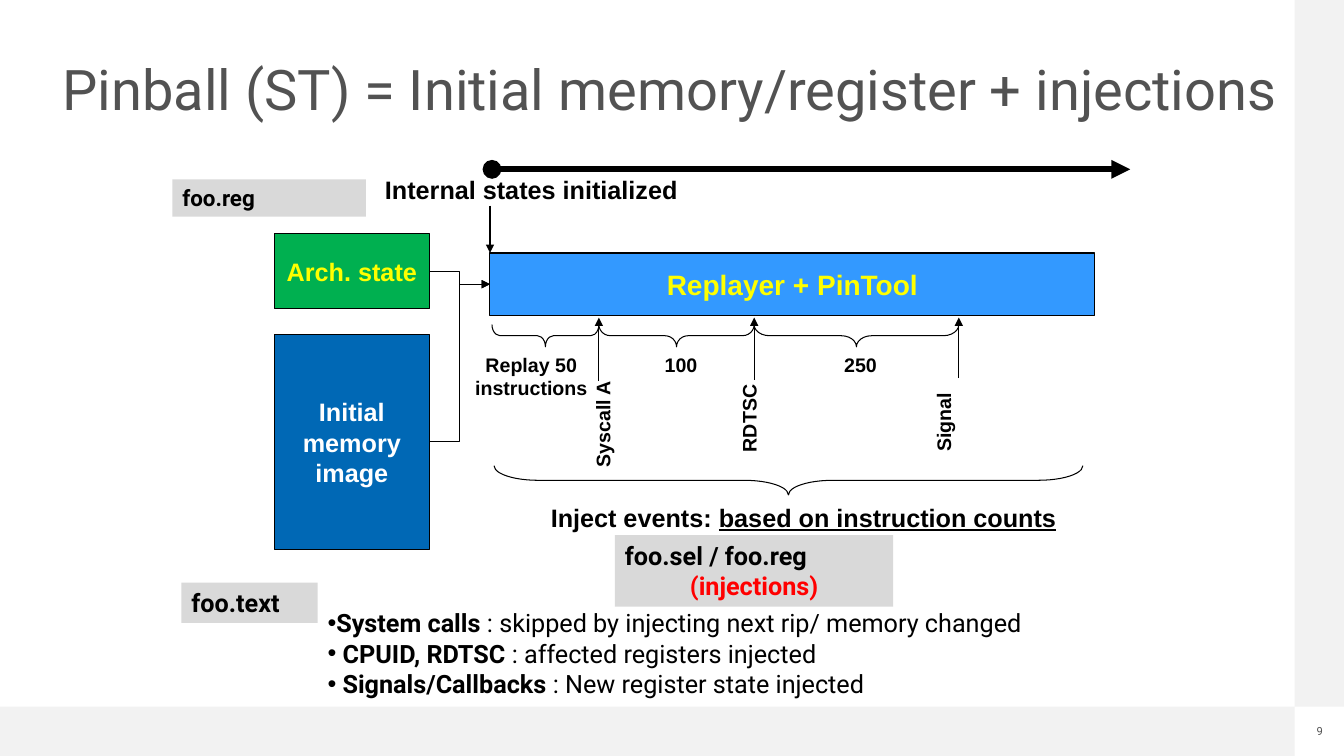
from lxml import etree
from pptx import Presentation
from pptx import util as u
from pptx.dml.color import RGBColor
from pptx.enum import shapes, text
from pptx.oxml.ns import qn

PX = 9144  # EMU in one px, a hundredth of an inch

BLACK = RGBColor(0, 0, 0)
WHITE = RGBColor(255, 255, 255)
YELLOW = RGBColor(255, 255, 0)
RED = RGBColor(255, 0, 0)
GREEN = RGBColor(0, 0xB0, 0x50)
NAVY = RGBColor(0, 0x68, 0xB5)
SKY = RGBColor(0x33, 0x99, 0xFF)
GREY = RGBColor(0xD9, 0xD9, 0xD9)
PALE = RGBColor(0xF2, 0xF2, 0xF2)
SLATE = RGBColor(0x52, 0x52, 0x52)

KIND = shapes.MSO_SHAPE
LINK = shapes.MSO_CONNECTOR
LEFT, MID = text.PP_ALIGN.LEFT, text.PP_ALIGN.CENTER


def px(*nums):
    return [u.Emu(round(n * PX)) for n in nums]


def add_run(par, words, size, color=BLACK, font="Arial", bold=True, under=False):
    run = par.add_run()
    run.text = words
    run.font.size = u.Pt(size)
    run.font.name = font
    run.font.bold = bold
    run.font.underline = under
    run.font.color.rgb = color


def next_par(frame, first, align=LEFT):
    par = frame.paragraphs[0] if first else frame.add_paragraph()
    par.alignment = align
    return par


def add_rect(tree, x, y, w, h, fill, edge=False):
    rect = tree.add_shape(KIND.RECTANGLE, *px(x, y, w, h))
    rect.shadow.inherit = False
    rect.fill.solid()
    rect.fill.fore_color.rgb = fill
    if edge:
        rect.line.color.rgb = BLACK
        rect.line.width = u.Pt(0.75)
    else:
        rect.line.fill.background()
    return rect


def add_block(tree, x, y, w, h, fill, words, size, color):
    block = add_rect(tree, x, y, w, h, fill, edge=True)
    frame = block.text_frame
    frame.word_wrap = True
    frame.vertical_anchor = text.MSO_ANCHOR.MIDDLE
    add_run(next_par(frame, True, MID), words, size, color)
    return block


def add_tag(tree, x, y, w, h, words, size, note=None):
    frame = add_rect(tree, x, y, w, h, GREY).text_frame
    frame.word_wrap = True
    frame.vertical_anchor = text.MSO_ANCHOR.TOP
    add_run(next_par(frame, True), words, size, font="Roboto")
    if note:
        add_run(next_par(frame, False, MID), note, size, RED, "Roboto")


def add_box(tree, x, y, w, h, wrap=False, inset=True):
    box = tree.add_textbox(*px(x, y, w, h))
    frame = box.text_frame
    frame.word_wrap = wrap
    if not inset:
        frame.margin_left = frame.margin_right = 0
        frame.margin_top = frame.margin_bottom = 0
    return box


def add_label(tree, x, y, w, h, lines, size=14, align=MID, turn=0):
    box = add_box(tree, x, y, w, h)
    box.rotation = turn
    for i, words in enumerate(lines):
        add_run(next_par(box.text_frame, i == 0, align), words, size)


def add_plain(tree, x, y, w, h, words, size):
    box = add_box(tree, x, y, w, h, inset=False)
    par = next_par(box.text_frame, True, MID)
    par.line_spacing = 0.9
    add_run(par, words, size, SLATE, "Roboto", bold=False)


def add_arrow(tree, x1, y1, x2, y2, kind=LINK.STRAIGHT, width=0.75, head=None):
    arrow = tree.add_connector(kind, *px(x1, y1, x2, y2))
    arrow.line.color.rgb = BLACK
    arrow.line.width = u.Pt(width)
    props = arrow.line._get_or_add_ln()
    if head:
        etree.SubElement(props, qn("a:headEnd"), type=head)
    etree.SubElement(props, qn("a:tailEnd"), type="triangle")
    etree.SubElement(arrow._element.spPr, qn("a:effectLst"))
    return arrow


def add_brace(tree, x1, x2, y, deep):
    # A left brace turned to point down, below the span x1 to x2
    span = x2 - x1
    left, top = (x1 + x2 - deep) / 2, y + (deep - span) / 2
    brace = tree.add_shape(KIND.LEFT_BRACE, *px(left, top, deep, span))
    brace.rotation = 270
    brace.adjustments[0] = 0.075 * span / deep
    brace.shadow.inherit = False
    brace.fill.background()
    brace.line.color.rgb = BLACK
    brace.line.width = u.Pt(0.75)


def add_list(tree, x, y, w, h, items):
    frame = add_box(tree, x, y, w, h, wrap=True).text_frame
    for i, (name, rest) in enumerate(items):
        par = next_par(frame, i == 0)
        props = par._p.get_or_add_pPr()
        props.set("marL", "0")
        props.set("indent", "0")
        etree.SubElement(props, qn("a:buFont"), typeface="Arial")
        etree.SubElement(props, qn("a:buChar"), char="•")
        add_run(par, name, 18, font="Roboto")
        add_run(par, rest, 18, font="Roboto", bold=False)


def main():
    deck = Presentation()
    deck.slide_width, deck.slide_height = px(1333, 750)
    tree = deck.slides.add_slide(deck.slide_layouts[6]).shapes

    # Edge bands, page number and title
    add_rect(tree, 0, 701, 1284, 49, PALE)
    add_rect(tree, 1284, 0, 49, 701, PALE)
    add_plain(tree, 1302, 720, 14, 13, "9", 8)
    add_plain(tree, 62, 62, 1204, 104,
              "Pinball (ST) = Initial memory/register + injections", 40)

    # State blocks feeding the replayer
    play = add_block(tree, 486, 251, 600, 62, SKY, "Replayer + PinTool", 20, YELLOW)
    arch = add_block(tree, 272, 232, 154, 74, GREEN, "Arch. state", 18, YELLOW)
    image = add_block(tree, 272, 332, 154, 213, NAVY, "Initial memory image", 18, WHITE)
    for block in (arch, image):
        bend = add_arrow(tree, 426, 282, 486, 282, LINK.ELBOW)
        bend.begin_connect(block, 3)
        bend.end_connect(play, 1)

    # Time line and its start
    add_label(tree, 372, 168, 313, 40, ["Internal states initialized"], 18, LEFT)
    add_arrow(tree, 486, 204, 486, 251)
    add_arrow(tree, 488, 168, 1121, 168, width=4.5, head="oval")

    # Events: stop, arrow foot, name centre, name length, name
    events = [
        (594, 378, 598, 421, 111, "Syscall A"),
        (748, 377, 743, 415, 100, "RDTSC"),
        (951, 375, 936, 419, 101, "Signal"),
    ]
    start = 488
    for stop, foot, mid, level, size, name in events:
        add_brace(tree, start, stop, 322, 22)
        add_arrow(tree, stop, foot, stop, 315)
        add_label(tree, mid - size / 2, level - 17, size, 34, [name], turn=270)
        start = stop

    # Instruction counts
    add_label(tree, 461, 345, 132, 57, ["Replay 50", "instructions"])
    add_label(tree, 649, 345, 53, 34, ["100"])
    add_label(tree, 827, 345, 53, 34, ["250"])

    # Injection summary
    add_brace(tree, 490, 1074, 462, 29)
    box = add_box(tree, 534, 493, 526, 40)
    par = next_par(box.text_frame, True, MID)
    add_run(par, "Inject events: ", 18)
    add_run(par, "based on instruction counts", 18, under=True)

    # File tags
    add_tag(tree, 171, 178, 192, 37, "foo.reg", 16)
    add_tag(tree, 180, 578, 135, 40, "foo.text", 18)
    add_tag(tree, 610, 531, 276, 71, "foo.sel / foo.reg", 18, "(injections)")

    # Kinds of injection
    add_list(tree, 315, 598, 852, 101, [
        ("System calls ", ": skipped by injecting next rip/ memory changed"),
        (" CPUID, RDTSC ", ": affected registers injected"),
        (" Signals/Callbacks", " : New register state injected"),
    ])

    deck.save("out.pptx")


if __name__ == "__main__":
    main()
